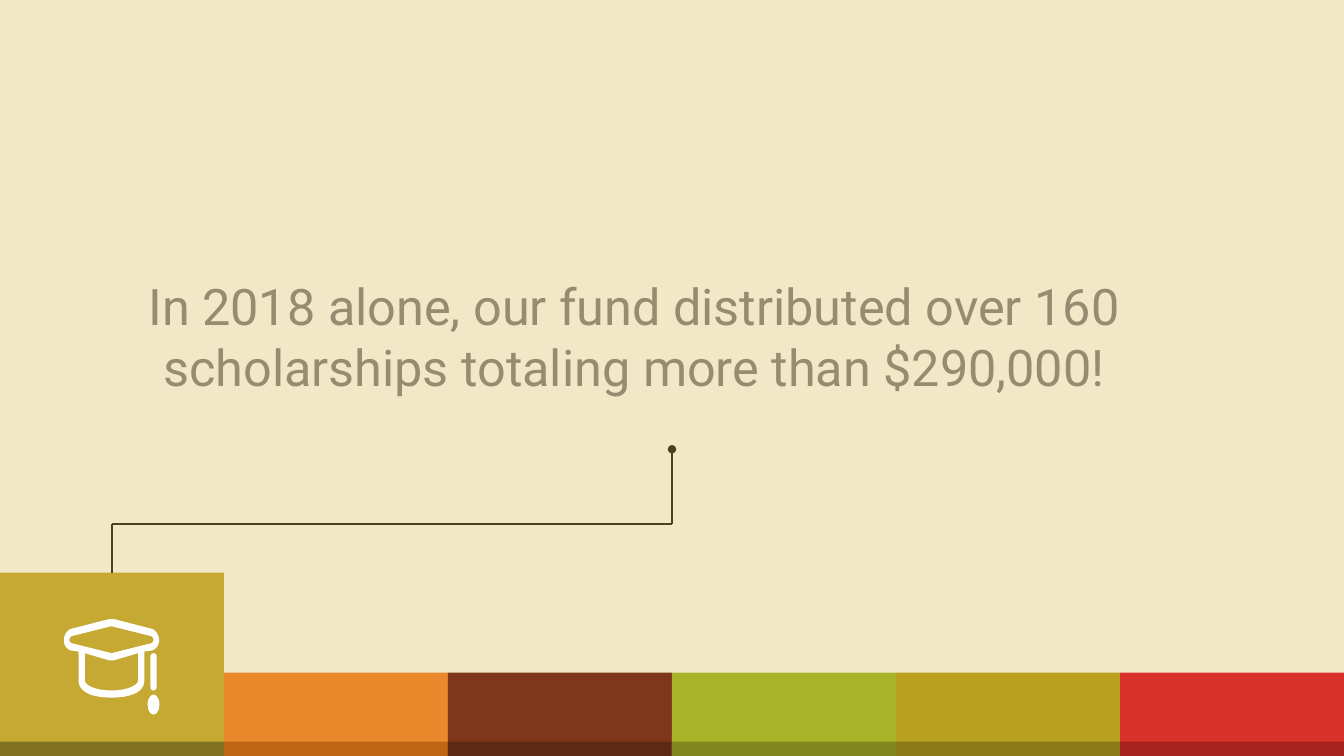
from dataclasses import dataclass

from lxml.etree import SubElement
from pptx import Presentation
from pptx.dml.color import RGBColor
from pptx.enum.shapes import MSO_CONNECTOR as Link, MSO_SHAPE as Preset
from pptx.enum.text import MSO_AUTO_SIZE as AutoSize, PP_ALIGN as Align
from pptx.oxml.ns import qn
from pptx.util import Cm, Pt


@dataclass(frozen=True)
class Theme:
    """Colours, font and sizes of the slide."""
    background: str = "F0E8C6"
    statement: str = "988B71"
    callout: str = "4D4021"
    icon: str = "FFFFFF"
    font: str = "Roboto"
    statement_size: float = 36
    callout_width: float = 1.25
    tiles: tuple = (
        ("C5A933", "837122"),
        ("EA892C", "BE6613"),
        ("7E371A", "5E2914"),
        ("AAB429", "80871F"),
        ("B9A01E", "8B7817"),
        ("DA312A", "A6221D"),
    )


THEME = Theme()
SLIDE_W, SLIDE_H = 33.87, 19.05
TILE_W = SLIDE_W / len(THEME.tiles)
TALL_TILE_H, TILE_H, SHADE_H = 4.62, 2.1, 0.36
CAP_AXIS, CAP_TOP = 2.81, 15.6

CAP_OUTLINE = [
    (0, 0), (0.06, 0), (1.03, 0.25),
    (1.13, 0.3, 1.2, 0.41, 1.2, 0.53),
    (1.2, 0.66, 1.13, 0.75, 1.03, 0.79),
    (0.83, 0.82), (0.83, 1.55),
    (0.83, 1.78, 0.6, 1.98, 0, 1.98),
]
BOARD_HOLE = [
    (0, 0.18), (1, 0.43),
    (1.04, 0.45, 1.06, 0.49, 1.06, 0.53),
    (1.06, 0.56, 1.04, 0.59, 1, 0.61),
    (0, 0.86),
]
CROWN_HOLE = [
    (0, 1.04), (0.06, 1.04), (0.67, 0.86), (0.67, 1.55),
    (0.67, 1.65, 0.44, 1.8, 0, 1.8),
]


def paint(shape, color):
    """Give a shape a plain fill without line or shadow."""
    shape.shadow.inherit = False
    shape.fill.solid()
    shape.fill.fore_color.rgb = RGBColor.from_string(color)
    shape.line.fill.background()


def add_block(slide, preset, left, top, width, height, color):
    """Add a filled preset shape, measured in centimetres."""
    block = slide.shapes.add_shape(preset, Cm(left), Cm(top), Cm(width), Cm(height))
    paint(block, color)
    return block


def add_tiles(slide):
    """Add the bottom row of tiles with shaded feet and return the tall first one."""
    tiles = []
    for column, (color, shade) in enumerate(THEME.tiles):
        left = column * TILE_W
        for height, fill in ((TILE_H if column else TALL_TILE_H, color), (SHADE_H, shade)):
            tiles.append(add_block(slide, Preset.RECTANGLE, left, SLIDE_H - height,
                                   TILE_W, height, fill))
    return tiles[0]


def add_callout_line(slide, start, end, dotted=False):
    """Add one straight piece of the callout, with a dot at its start on demand."""
    points = [Cm(value) for value in (*start, *end)]
    piece = slide.shapes.add_connector(Link.STRAIGHT, *points)
    piece.line.color.rgb = RGBColor.from_string(THEME.callout)
    piece.line.width = Pt(THEME.callout_width)
    properties = piece._element.spPr
    if dotted:
        SubElement(properties.find(qn("a:ln")), qn("a:headEnd"), type="oval")
    SubElement(properties, qn("a:effectLst"))
    return piece


def add_callout(slide, scholarship_tile):
    """Lead from the statement down to the scholarship tile."""
    tile_x, statement_x, bend_y = TILE_W / 2, SLIDE_W / 2, 13.2
    add_callout_line(slide, (tile_x, bend_y), (statement_x, bend_y))
    stem = add_callout_line(slide, (tile_x, bend_y), (tile_x, SLIDE_H - TALL_TILE_H))
    stem.end_connect(scholarship_tile, 0)
    add_callout_line(slide, (statement_x, 11.32), (statement_x, bend_y), dotted=True)


def add_statement(slide, text):
    """Add the centred statement."""
    box = slide.shapes.add_textbox(Cm(1.8), Cm(6.81), Cm(28.37), Cm(3.33))
    frame = box.text_frame
    frame.word_wrap = True
    frame.auto_size = AutoSize.SHAPE_TO_FIT_TEXT
    paragraph = frame.paragraphs[0]
    paragraph.alignment = Align.CENTER
    run = paragraph.add_run()
    run.text = text
    run.font.name = THEME.font
    run.font.size = Pt(THEME.statement_size)
    run.font.color.rgb = RGBColor.from_string(THEME.statement)


def bezier(start, curve, steps=10):
    """Return points along a cubic curve, without its start."""
    controls = (start, curve[:2], curve[2:4], curve[4:])
    points = []
    for step in range(1, steps + 1):
        t = step / steps
        weights = ((1 - t) ** 3, 3 * t * (1 - t) ** 2, 3 * t ** 2 * (1 - t), t ** 3)
        points.append(tuple(sum(w * c[axis] for w, c in zip(weights, controls))
                            for axis in (0, 1)))
    return points


def mirrored(half):
    """Turn a right half of lines and curves into a full contour in slide units."""
    points = []
    for segment in half:
        points += [segment] if len(segment) == 2 else bezier(points[-1], segment)
    points += [(-x, y) for x, y in reversed(points)]
    return [(Cm(CAP_AXIS + x), Cm(CAP_TOP + y)) for x, y in points]


def add_graduation_cap(slide):
    """Add the cap with its cord and tassel."""
    outline, *holes = [mirrored(half) for half in (CAP_OUTLINE, BOARD_HOLE, CROWN_HOLE)]
    builder = slide.shapes.build_freeform(*outline[0])
    builder.add_line_segments(outline[1:])
    for hole in holes:
        builder.move_to(*hole[0])
        builder.add_line_segments(hole[1:])
    paint(builder.convert_to_shape(), THEME.icon)
    cord = add_block(slide, Preset.ROUNDED_RECTANGLE, 3.79, 16.46, 0.16, 0.94, THEME.icon)
    cord.adjustments[0] = 0.5
    add_block(slide, Preset.OVAL, 3.72, 17.5, 0.3, 0.51, THEME.icon)


def main():
    """Build the scholarship slide and save it."""
    deck = Presentation()
    deck.slide_width, deck.slide_height = Cm(SLIDE_W), Cm(SLIDE_H)
    slide = deck.slides.add_slide(deck.slide_layouts[6])
    slide.background.fill.solid()
    slide.background.fill.fore_color.rgb = RGBColor.from_string(THEME.background)
    scholarship_tile = add_tiles(slide)
    add_callout(slide, scholarship_tile)
    add_statement(slide, "In 2018 alone, our fund distributed over 160 "
                         "scholarships totaling more than $290,000!")
    add_graduation_cap(slide)
    deck.save("out.pptx")


if __name__ == "__main__":
    main()
